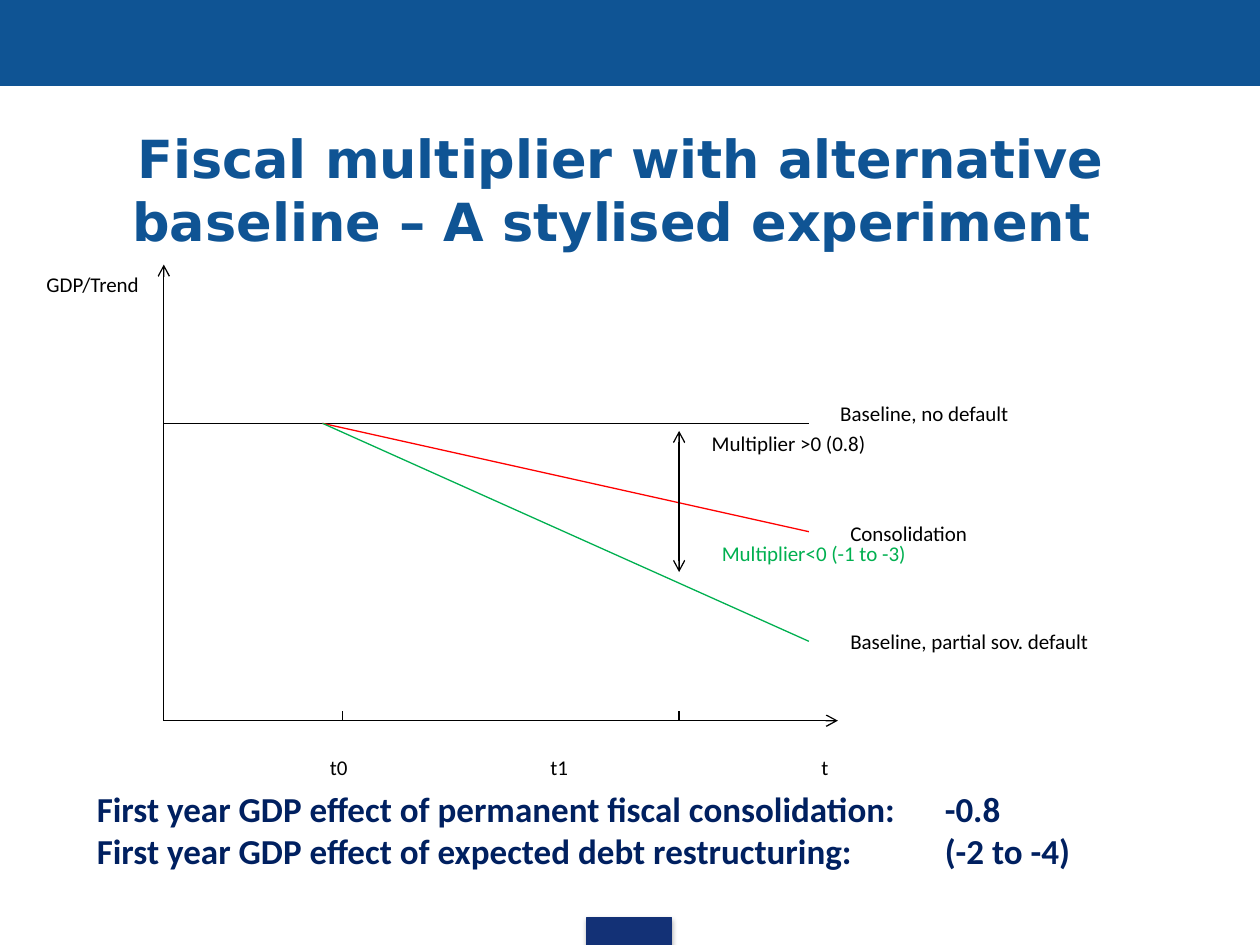
from lxml import etree
from pptx import Presentation
from pptx.dml.color import RGBColor
from pptx.enum.shapes import MSO_CONNECTOR, MSO_SHAPE
from pptx.enum.text import PP_ALIGN
from pptx.oxml import parse_xml
from pptx.oxml.ns import nsdecls, qn
from pptx.util import Inches, Pt

STRAIGHT = MSO_CONNECTOR.STRAIGHT
RECTANGLE = MSO_SHAPE.RECTANGLE
CENTER = PP_ALIGN.CENTER

COLORS = {
    "blue": "0F5494", "footer": "133176", "navy": "002060",
    "black": "000000", "red": "FF0000", "green": "00B050",
}

TITLE = "Fiscal multiplier with alternative baseline – A stylised experiment "
RESULTS = [
    "First year GDP effect of permanent fiscal consolidation:\t-0.8",
    "First year GDP effect of expected debt restructuring:\t(-2 to -4)",
]
VALUE_TAB = 6.73

# Diagram geometry in inches
ORIGIN_X, ORIGIN_Y = 1.3, 5.72
AXIS_TOP, AXIS_RIGHT = 2.1, 6.65
SHOCK_X, END_X, BASELINE_Y = 2.56, 6.42, 3.36
TICKS, TICK_HEIGHT = (2.72, 5.39), 0.08
TIME_LABEL_Y = 5.94

# start, end, colour, arrowheads
LINES = [
    ((ORIGIN_X, ORIGIN_Y), (ORIGIN_X, AXIS_TOP), "black", ["tailEnd"]),
    ((ORIGIN_X, ORIGIN_Y), (AXIS_RIGHT, ORIGIN_Y), "black", ["tailEnd"]),
    ((ORIGIN_X, BASELINE_Y), (END_X, BASELINE_Y), "black", []),
    ((SHOCK_X, BASELINE_Y), (END_X, 4.22), "red", []),
    ((SHOCK_X, BASELINE_Y), (END_X, 5.09), "green", []),
    ((TICKS[1], 3.42), (TICKS[1], 4.54), "black", ["headEnd", "tailEnd"]),
] + [((x, ORIGIN_Y), (x, ORIGIN_Y - TICK_HEIGHT), "black", []) for x in TICKS]

# text, (left, top, width, height), colour
LABELS = [
    ("GDP/Trend", (0.27, 2.11, 1.02, 0.3), "black"),
    ("Baseline, no default", (6.57, 3.13, 2.28, 0.3), "black"),
    ("Multiplier >0 (0.8)", (5.55, 3.37, 1.97, 0.3), "black"),
    ("Consolidation", (6.65, 4.08, 1.73, 0.3), "black"),
    ("Multiplier<0 (-1 to -3)", (5.63, 4.24, 1.81, 0.3), "green"),
    ("Baseline, partial sov. default", (6.65, 4.94, 2.76, 0.3), "black"),
    ("t0", (2.52, TIME_LABEL_Y, 0.87, 0.4), "black"),
    ("t1", (4.27, TIME_LABEL_Y, 0.87, 0.4), "black"),
    ("t", (6.42, TIME_LABEL_Y, 0.87, 0.4), "black"),
]

FORMATS = {
    "title": {"name": "DejaVu Sans", "size": Pt(30), "bold": True},
    "results": {"name": "Calibri", "size": Pt(20), "bold": True},
    "label": {"name": "Calibri", "size": Pt(12)},
}


def rgb(color):
    return RGBColor.from_string(COLORS[color])


def add_bar(shapes, box, color):
    bar = shapes.add_shape(RECTANGLE, *map(Inches, box))
    bar.shadow.inherit = False
    bar.fill.solid()
    bar.fill.fore_color.rgb = rgb(color)
    bar.line.color.rgb = rgb(color)
    bar.line.width = Pt(0.75)
    return bar


def add_soft_shadow(shape):
    effects = shape._element.spPr.find(qn("a:effectLst"))
    effects.append(parse_xml(
        f'<a:outerShdw {nsdecls("a")} blurRad="{Pt(3.1)}" dist="{Pt(1.8)}" '
        'dir="5400000" rotWithShape="0"><a:srgbClr val="000000">'
        '<a:alpha val="35000"/></a:srgbClr></a:outerShdw>'))


def add_line(shapes, start, end, color, arrowheads):
    line = shapes.add_connector(STRAIGHT, *map(Inches, start + end))
    line.line.color.rgb = rgb(color)
    line.line.width = Pt(0.75)
    outline = line.line._get_or_add_ln()
    for arrowhead in arrowheads:
        etree.SubElement(outline, qn(f"a:{arrowhead}"), type="arrow")
    etree.SubElement(line._element.spPr, qn("a:effectLst"))


def add_text(shapes, lines, box, color, style, alignment=None, tab=None):
    text_box = shapes.add_textbox(*map(Inches, box))
    frame = text_box.text_frame
    frame.word_wrap = True
    frame.text = "\n".join(lines)
    for paragraph in frame.paragraphs:
        if tab:
            tabs = etree.SubElement(paragraph._p.get_or_add_pPr(), qn("a:tabLst"))
            etree.SubElement(tabs, qn("a:tab"), pos=str(Inches(tab)), algn="l")
        paragraph.alignment = alignment
        for name, value in FORMATS[style].items():
            setattr(paragraph.font, name, value)
        paragraph.font.color.rgb = rgb(color)
    return text_box


def main():
    presentation = Presentation()
    presentation.slide_width, presentation.slide_height = Inches(10), Inches(7.5)
    slide = presentation.slides.add_slide(presentation.slide_layouts[6])
    shapes = slide.shapes

    add_bar(shapes, (0, 0, 10, 0.68), "blue")
    add_soft_shadow(add_bar(shapes, (4.66, 7.28, 0.67, 0.22), "footer"))
    add_text(shapes, RESULTS, (0.67, 6.2, 8.19, 0.77), "navy", "results", tab=VALUE_TAB)

    diagram = shapes.add_group_shape().shapes
    for start, end, color, arrowheads in LINES:
        add_line(diagram, start, end, color, arrowheads)
    for text, box, color in LABELS:
        add_text(diagram, [text], box, color, "label")

    title = add_text(shapes, [TITLE], (0.43, 0.91, 9, 1.02), "blue", "title", CENTER)
    title.text_frame.margin_top = Inches(0.09)

    presentation.save("out.pptx")


if __name__ == "__main__":
    main()
